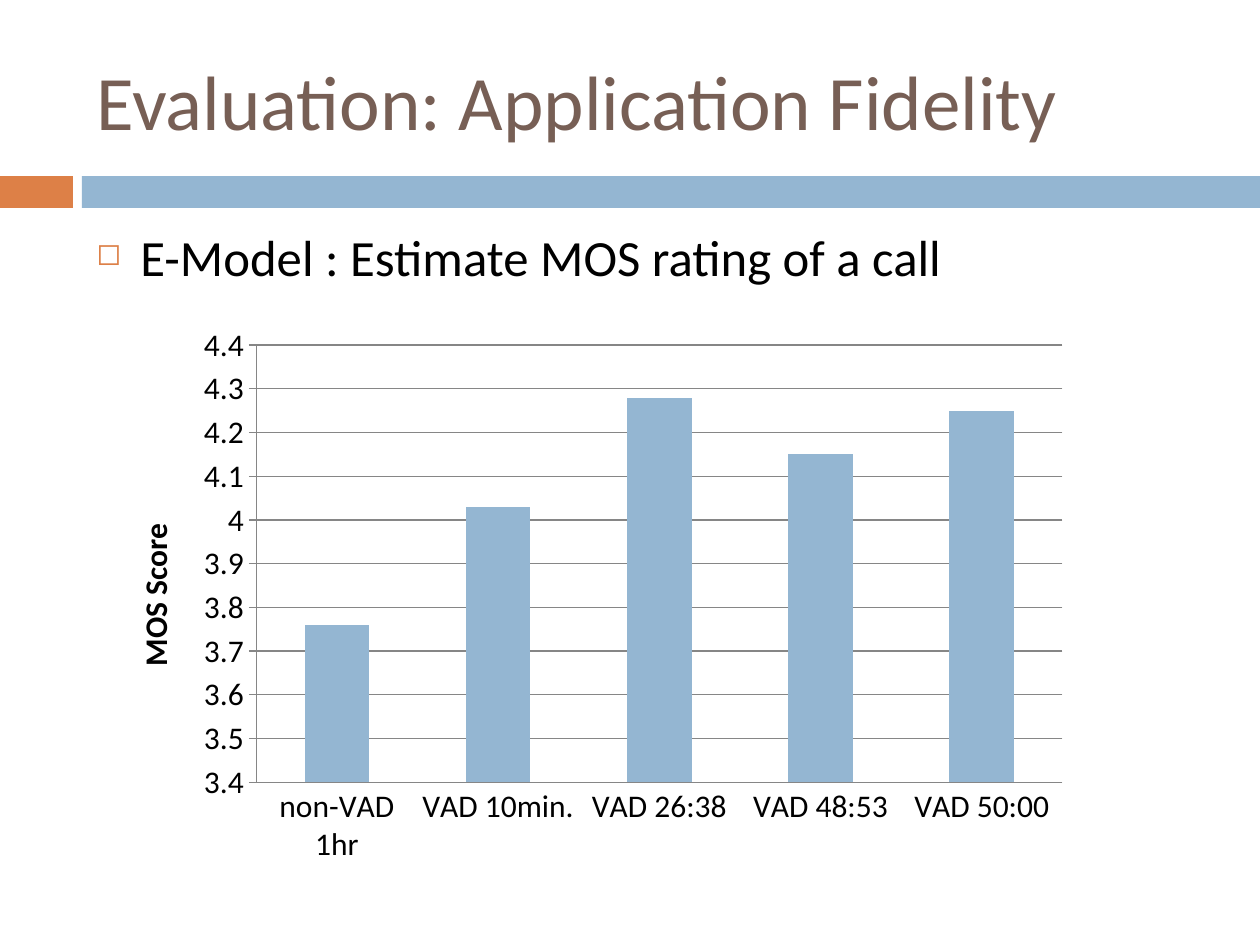
from lxml.etree import SubElement
from pptx import Presentation
from pptx.chart.data import CategoryChartData
from pptx.dml.color import RGBColor
from pptx.enum.chart import XL_CHART_TYPE as ChartType, XL_TICK_MARK as TickMark
from pptx.enum.shapes import MSO_SHAPE as Shape
from pptx.enum.text import MSO_ANCHOR as Anchor
from pptx.oxml.ns import qn
from pptx.util import Pt

EMU_PER_PX = 914400 / 126
FONT = "Calibri"
ORANGE = RGBColor(0xDD, 0x80, 0x47)
BLUE = RGBColor(0x94, 0xB6, 0xD2)
BROWN = RGBColor(0x77, 0x5F, 0x55)
BLACK = RGBColor(0, 0, 0)
GRAY = RGBColor(0x86, 0x86, 0x86)

MOS_SCORES = {
    "non-VAD 1hr": 3.76,
    "VAD 10min.": 4.03,
    "VAD 26:38": 4.28,
    "VAD 48:53": 4.15,
    "VAD 50:00": 4.25,
}


def px(length):
    """Turn a pixel length into EMU."""
    return round(length * EMU_PER_PX)


def box(*lengths):
    """Turn left, top, width and height into EMU."""
    return [px(length) for length in lengths]


def style_font(font, size, color, bold=False):
    """Set the face, size, colour and weight of a font."""
    font.name = FONT
    font.size = Pt(size)
    font.color.rgb = color
    font.bold = bold


def add_band(slide, bounds, color):
    """Add a plain filled rectangle."""
    band = slide.shapes.add_shape(Shape.RECTANGLE, *box(*bounds))
    band.shadow.inherit = False
    band.fill.solid()
    band.fill.fore_color.rgb = color
    band.line.fill.background()


def add_text(slide, text, bounds, size, color, anchor=Anchor.TOP, space_before=0):
    """Add one paragraph of text and return it."""
    frame = slide.shapes.add_textbox(*box(*bounds)).text_frame
    frame.word_wrap = True
    frame.vertical_anchor = anchor
    paragraph = frame.paragraphs[0]
    paragraph.space_before = Pt(space_before)
    run = paragraph.add_run()
    run.text = text
    style_font(run.font, size, color)
    return paragraph


def add_bullet(paragraph, symbol, color, percent, indent):
    """Give a paragraph a coloured bullet and a hanging indent."""
    properties = paragraph._p.get_or_add_pPr()
    properties.set("marL", str(px(indent)))
    properties.set("indent", str(-px(indent)))
    bullet_color = SubElement(properties, qn("a:buClr"))
    SubElement(bullet_color, qn("a:srgbClr"), val=str(color))
    SubElement(properties, qn("a:buSzPct"), val=str(percent * 1000))
    SubElement(properties, qn("a:buChar"), char=symbol)


def place_plot(chart, **fractions):
    """Fix the inner plot area as fractions of the chart."""
    plot_area = chart._chartSpace.chart.plotArea
    layout = plot_area.find(qn("c:layout"))
    if layout is None:
        layout = SubElement(plot_area, qn("c:layout"))
        plot_area.insert(0, layout)
    manual = SubElement(layout, qn("c:manualLayout"))
    SubElement(manual, qn("c:layoutTarget"), val="inner")
    for side in ("x", "y"):
        SubElement(manual, qn(f"c:{side}Mode"), val="edge")
    for side, fraction in fractions.items():
        SubElement(manual, qn(f"c:{side}"), val=str(fraction))


def add_mos_chart(slide, bounds):
    """Add the column chart of MOS scores."""
    scores = CategoryChartData()
    scores.categories = list(MOS_SCORES)
    scores.add_series("Series 1", list(MOS_SCORES.values()))
    chart = slide.shapes.add_chart(
        ChartType.COLUMN_CLUSTERED, *box(*bounds), scores).chart
    chart.has_legend = False
    chart.has_title = False
    style_font(chart.font, 18, BLACK)
    place_plot(chart, x=0.155, y=0.054, w=0.826, h=0.782)

    columns = chart.plots[0]
    columns.vary_by_categories = False
    columns.gap_width = 150
    columns.series[0].format.fill.solid()
    columns.series[0].format.fill.fore_color.rgb = BLUE

    score_axis = chart.value_axis
    score_axis.minimum_scale, score_axis.maximum_scale = 3.4, 4.4
    score_axis.major_unit = 0.1
    score_axis.major_tick_mark = TickMark.CROSS
    score_axis.tick_labels.number_format = "General"
    score_axis.tick_labels.number_format_is_linked = False
    score_axis.has_major_gridlines = True
    axis_title = score_axis.axis_title.text_frame
    axis_title.text = "MOS Score"
    style_font(axis_title.paragraphs[0].runs[0].font, 18, BLACK, bold=True)

    call_axis = chart.category_axis
    call_axis.major_tick_mark = TickMark.NONE
    for ruled in (score_axis, call_axis, score_axis.major_gridlines):
        ruled.format.line.color.rgb = GRAY
        ruled.format.line.width = Pt(0.75)


def main():
    """Build the slide and save it."""
    deck = Presentation()
    deck.slide_width, deck.slide_height = px(1260), px(945)
    slide = deck.slides.add_slide(deck.slide_layouts[6])
    add_band(slide, (0, 176, 73, 32), ORANGE)
    add_band(slide, (82, 176, 1178, 32), BLUE)
    add_text(slide, "Evaluation: Application Fidelity", (84, 32, 1124, 136),
             44, BROWN, anchor=Anchor.MIDDLE)
    point = add_text(slide, "E-Model : Estimate MOS rating of a call",
                     (84, 220, 1124, 620), 29, BLACK, space_before=7)
    add_bullet(point, "◻", ORANGE, percent=60, indent=44)
    add_mos_chart(slide, (105, 315, 976, 559))
    deck.save("out.pptx")


if __name__ == "__main__":
    main()
